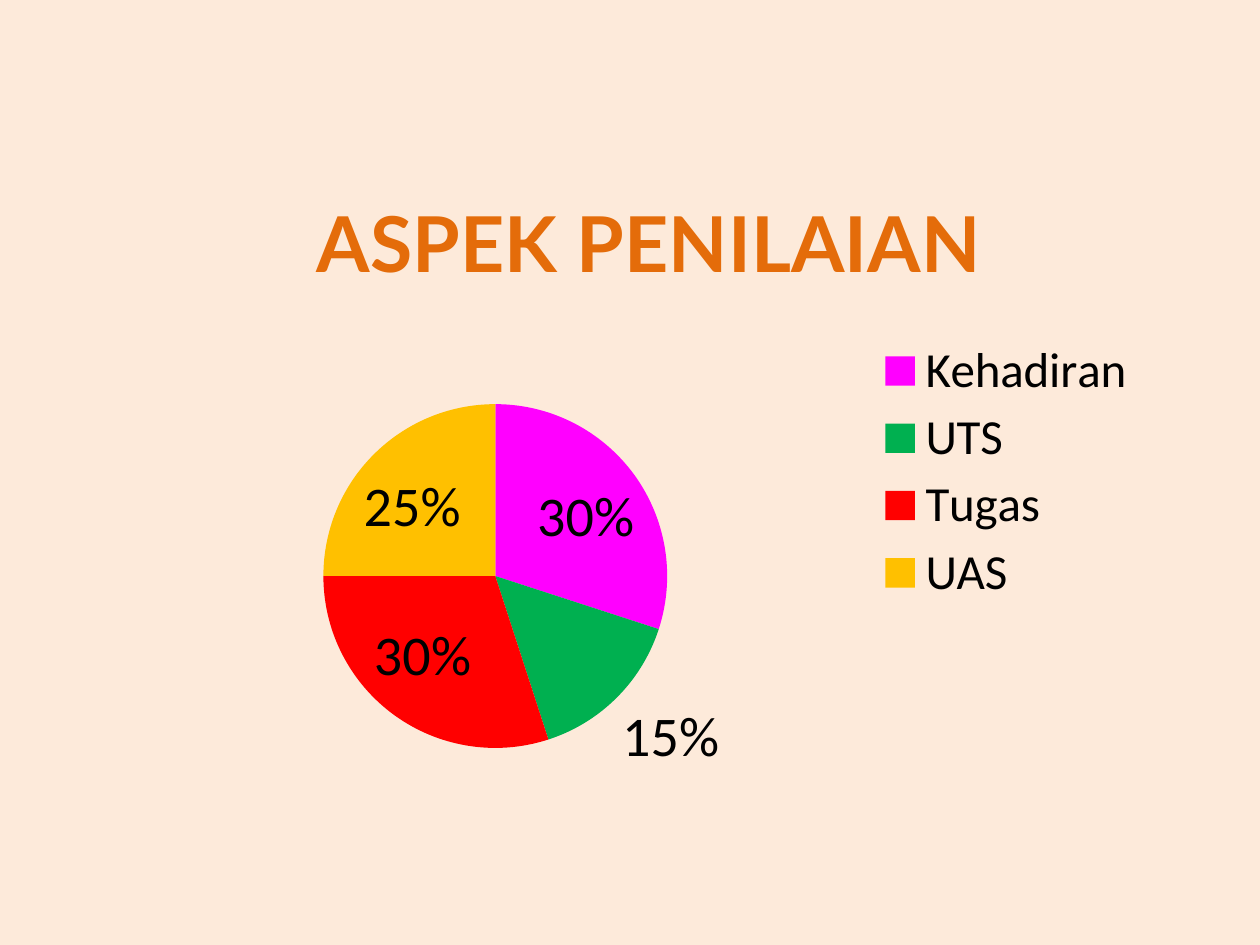
from lxml.etree import SubElement
from pptx import Presentation
from pptx.chart.data import CategoryChartData
from pptx.dml.color import RGBColor
from pptx.enum.chart import XL_CHART_TYPE, XL_LABEL_POSITION, XL_LEGEND_POSITION
from pptx.oxml.ns import qn
from pptx.util import Pt

PX = 914400 // 126
SLICES = [
    ("Kehadiran", 30, "FF00FF"),
    ("UTS", 15, "00B050"),
    ("Tugas", 30, "FF0000"),
    ("UAS", 25, "FFC000"),
]


def color(value):
    return RGBColor.from_string(value)


def place(element, after, inner=False, **fractions):
    """Give a chart part a manual layout, as fractions of the chart's size."""
    for old in element.findall(qn("c:layout")):
        element.remove(old)
    layout = SubElement(element, qn("c:layout"))
    manual = SubElement(layout, qn("c:manualLayout"))
    settings = {"layoutTarget": "inner"} if inner else {}
    settings.update(xMode="edge", yMode="edge", **fractions)
    for name, value in settings.items():
        SubElement(manual, qn(f"c:{name}")).set("val", str(value))
    previous = element.find(qn(after)) if after else None
    element.insert(0 if previous is None else element.index(previous) + 1, layout)


class SlideBuilder:
    text_color = "000000"
    body_font = "Calibri"
    title_font = "Lato"
    title_color = "E46C0A"
    background = "FDEADA"

    def __init__(self, slide):
        self.slide = slide
        fill = slide.background.fill
        fill.solid()
        fill.fore_color.rgb = color(self.background)

    def style(self, font, size, name=None, fill=None, bold=False):
        font.size = Pt(size)
        font.name = name or self.body_font
        font.color.rgb = color(fill or self.text_color)
        font.bold = bold

    def pie(self, title, slices, left, top, width, height):
        data = CategoryChartData(number_format="0")
        data.categories = [name for name, _, _ in slices]
        data.add_series(title, [value for _, value, _ in slices])
        box = [length * PX for length in (left, top, width, height)]
        chart = self.slide.shapes.add_chart(XL_CHART_TYPE.PIE, *box, data).chart
        self.style(chart.font, 18)

        # Slices and percentages
        plot = chart.plots[0]
        plot.vary_by_categories = True
        for index, (_, _, fill_color) in enumerate(slices):
            fill = plot.series[0].points[index].format.fill
            fill.solid()
            fill.fore_color.rgb = color(fill_color)
        labels = plot.series[0].data_labels
        labels.show_value = False
        labels.show_percentage = True
        labels.number_format = "0%"
        labels.number_format_is_linked = False
        labels.position = XL_LABEL_POSITION.BEST_FIT
        self.style(labels.font, 32)
        return chart

    def title(self, chart, text):
        chart.has_title = True
        paragraph = chart.chart_title.text_frame.paragraphs[0]
        paragraph.text = text
        self.style(paragraph.font, 44, self.title_font, self.title_color, bold=True)

    def legend(self, chart):
        chart.has_legend = True
        chart.legend.position = XL_LEGEND_POSITION.RIGHT
        chart.legend.include_in_layout = False
        self.style(chart.legend.font, 28)


def main():
    presentation = Presentation()
    presentation.slide_width = 1260 * PX
    presentation.slide_height = 945 * PX
    builder = SlideBuilder(presentation.slides.add_slide(presentation.slide_layouts[6]))

    # Grading chart with its title and legend
    heading = "ASPEK PENILAIAN"
    chart = builder.pie(heading, SLICES, 115, 125, 1042, 694)
    builder.title(chart, heading)
    builder.legend(chart)

    # Places of the parts inside the chart
    plot_area = chart.plots[0]._element.getparent()
    place(plot_area, None, inner=True, x=0.2, y=0.4, w=0.33, h=0.5)
    place(chart.chart_title._element, "c:tx", x=0.18, y=0.07)
    place(chart.legend._element, "c:legendPos", x=0.73, y=0.3, w=0.25, h=0.4)

    presentation.save("out.pptx")


if __name__ == "__main__":
    main()
